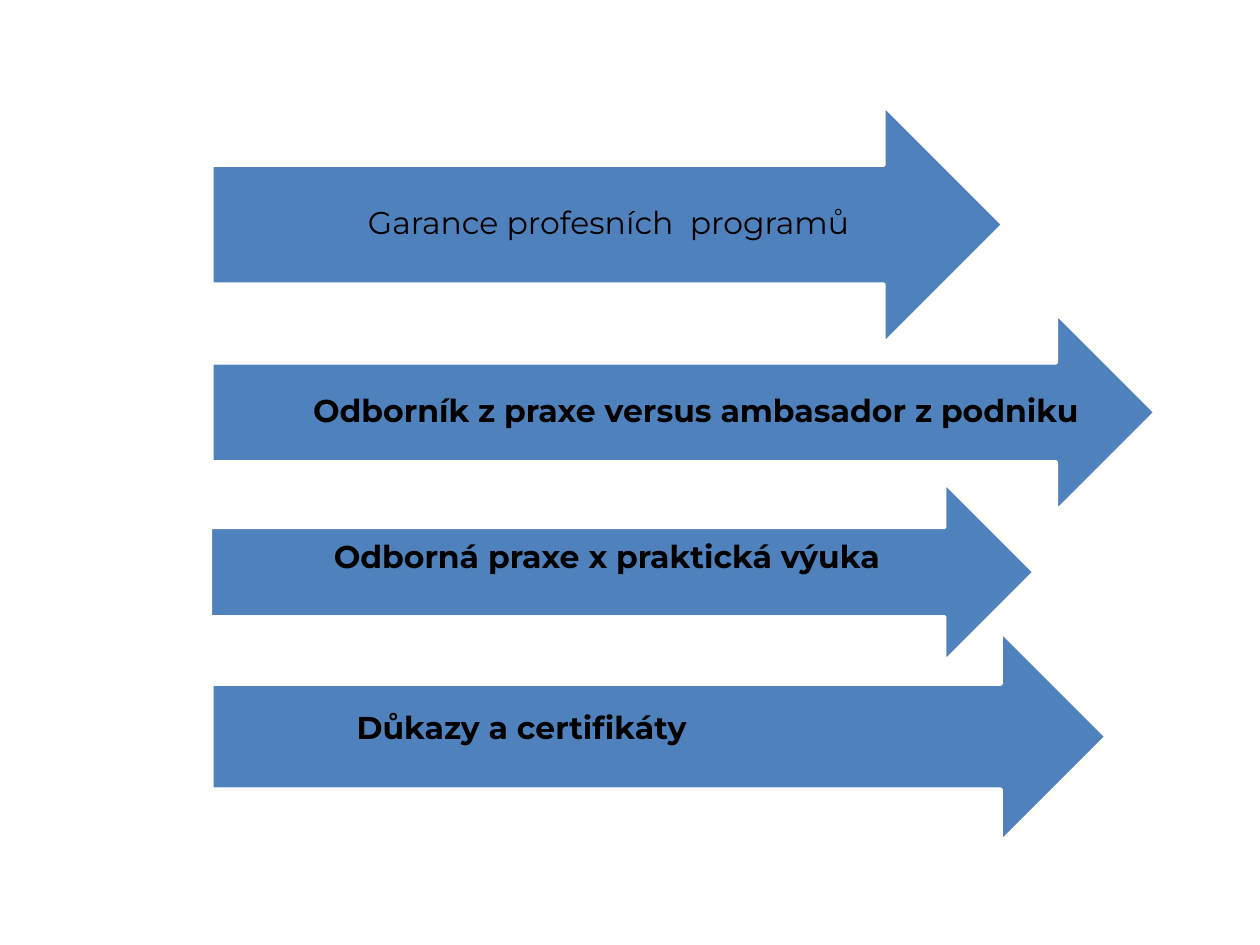
from dataclasses import dataclass

from pptx import Presentation
from pptx.dml.color import RGBColor
from pptx.enum.shapes import MSO_SHAPE as Shape
from pptx.enum.text import MSO_ANCHOR as Anchor, PP_ALIGN as Align
from pptx.util import Cm, Pt


@dataclass(frozen=True)
class Theme:
    arrow: RGBColor = RGBColor(0x4F, 0x81, 0xBD)
    outline: RGBColor = RGBColor(0xFF, 0xFF, 0xFF)
    text: RGBColor = RGBColor(0, 0, 0)
    font: str = "Montserrat"
    size: Pt = Pt(18)
    outline_width: Pt = Pt(2)


@dataclass(frozen=True)
class Topic:
    text: str
    arrow: tuple
    label: tuple
    bold: bool = True
    indent: float = 0


THEME = Theme()
ARROW_LEFT = 4.27
TOPICS = (
    Topic("Garance profesních  programů",
          (ARROW_LEFT, 2.13, 15.95, 4.8), (5.54, 2.92, 13.46, 3.2), bold=False),
    Topic("Odborník z praxe versus ambasador z podniku",
          (ARROW_LEFT, 6.32, 19.02, 3.99), (5.79, 7.01, 16.48, 2.62)),
    Topic("Odborná praxe x praktická výuka",
          (4.24, 9.73, 16.61, 3.61), (4.24, 9.93, 16.26, 2.64), indent=2.49),
    Topic("Důkazy a certifikáty",
          (ARROW_LEFT, 12.73, 18.03, 4.24), (3.94, 13.36, 16.26, 2.69), indent=3.25),
)


def add_arrow(slide, box):
    shape = slide.shapes.add_shape(Shape.RIGHT_ARROW, *map(Cm, box))
    shape.shadow.inherit = False
    shape.fill.solid()
    shape.fill.fore_color.rgb = THEME.arrow
    shape.line.color.rgb = THEME.outline
    shape.line.width = THEME.outline_width


def add_label(slide, topic):
    frame = slide.shapes.add_textbox(*map(Cm, topic.label)).text_frame
    frame.word_wrap = True
    frame.vertical_anchor = Anchor.MIDDLE
    frame.margin_left = Cm(topic.indent)
    frame.margin_right = 0
    frame.margin_top = frame.margin_bottom = Cm(0.5)
    paragraph = frame.paragraphs[0]
    paragraph.text = topic.text
    paragraph.alignment = Align.LEFT if topic.indent else Align.CENTER
    paragraph.line_spacing = 0.9
    font = paragraph.font
    font.name = THEME.font
    font.size = THEME.size
    font.bold = topic.bold
    font.color.rgb = THEME.text


def main():
    presentation = Presentation()
    presentation.slide_width = Cm(25.4)
    presentation.slide_height = Cm(19.05)
    slide = presentation.slides.add_slide(presentation.slide_layouts[6])
    for topic in TOPICS:
        add_arrow(slide, topic.arrow)
        add_label(slide, topic)
    presentation.save("out.pptx")


if __name__ == "__main__":
    main()
